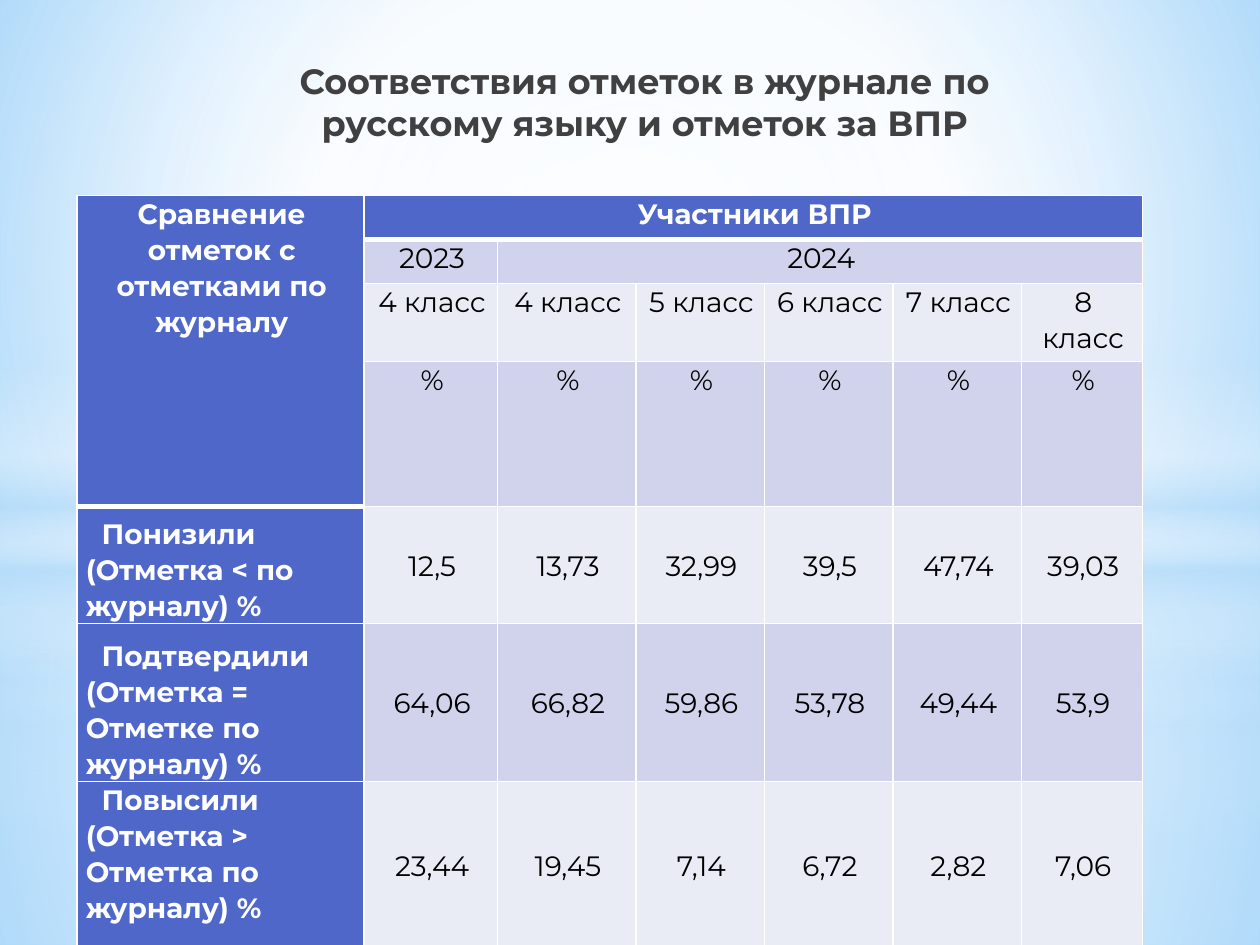
import dataclasses

import pptx
import pptx.dml.color
import pptx.enum.shapes
import pptx.enum.text
import pptx.oxml
import pptx.oxml.ns
import pptx.util

Cm = pptx.util.Cm
Pt = pptx.util.Pt
Anchor = pptx.enum.text.MSO_ANCHOR
Align = pptx.enum.text.PP_ALIGN
ShapeType = pptx.enum.shapes.MSO_SHAPE
qn = pptx.oxml.ns.qn
NAMESPACE = pptx.oxml.ns.nsdecls("a")


@dataclasses.dataclass(frozen=True)
class Theme:
    font: str = "Montserrat"
    title_size: float = 20
    table_size: float = 16
    title: str = "404040"
    header: str = "4E67C8"
    band_dark: str = "D0D3EB"
    band_light: str = "E9EBF5"
    text: str = "000000"
    white: str = "FFFFFF"
    haze: str = "B4DCFA"
    sky: str = "9ED5FF"
    deep_sky: str = "5BB9FF"


THEME = Theme()

COLUMN_WIDTHS = [5.79, 2.69, 2.79, 2.59, 2.59, 2.59, 2.44]
ROW_HEIGHTS = [0.89, 0.89, 1.57, 2.92, 2.36, 3.18, 3.38]
HEADER_ROWS = 4
ROWS = [
    ["Сравнение отметок с отметками по журналу", "Участники ВПР"],
    ["", "2023", "2024"],
    ["", "4 класс", "4 класс", "5 класс", "6 класс", "7 класс", "8 класс"],
    [""] + ["%"] * 6,
    ["Понизили (Отметка < по журналу) %",
     "12,5", "13,73", "32,99", "39,5", "47,74", "39,03"],
    ["Подтвердили (Отметка = Отметке по журналу) %",
     "64,06", "66,82", "59,86", "53,78", "49,44", "53,9"],
    ["Повысили (Отметка > Отметка по журналу) %",
     "23,44", "19,45", "7,14", "6,72", "2,82", "7,06"],
]
MERGES = [((0, 0), (3, 0)), ((0, 1), (0, 6)), ((1, 2), (1, 6))]
THICK_BELOW = {(0, column) for column in range(1, 7)} | {(0, 0), (3, 0)}


def rgb(value):
    return pptx.dml.color.RGBColor.from_string(value)


def gradient(stops, focus=None):
    stop_xml = "".join(
        f'<a:gs pos="{position * 1000}"><a:srgbClr val="{color}">'
        f'<a:alpha val="{alpha * 1000}"/></a:srgbClr></a:gs>'
        for position, color, alpha in stops
    )
    if focus:
        left, top, right, bottom = (value * 1000 for value in focus)
        direction = (
            f'<a:path path="circle"><a:fillToRect l="{left}" t="{top}" '
            f'r="{right}" b="{bottom}"/></a:path>'
        )
    else:
        direction = '<a:lin ang="5400000" scaled="0"/>'
    return pptx.oxml.parse_xml(
        f'<a:gradFill {NAMESPACE} rotWithShape="1">'
        f"<a:gsLst>{stop_xml}</a:gsLst>{direction}</a:gradFill>"
    )


def add_glow(slide, shape_type, top, height, stops, focus=(50, 50, 50, 50)):
    shape = slide.shapes.add_shape(shape_type, 0, Cm(top), Cm(25.4), Cm(height))
    shape.shadow.inherit = False
    shape.line.fill.background()
    shape.fill.background()
    properties = shape._element.spPr
    properties.replace(properties.find(qn("a:noFill")), gradient(stops, focus))


def add_horizon(slide, horizon, height, extra_alpha):
    white, haze = THEME.white, THEME.haze
    rectangle = ShapeType.RECTANGLE
    ground = [(0, white, 91 + extra_alpha), (37, white, 76 + extra_alpha),
              (100, haze, 79 + extra_alpha)]
    heaven = [(0, white, 89 + extra_alpha), (48, white, 62 + extra_alpha),
              (100, haze, 79 + extra_alpha)]
    streak = [(0, white, 0), (29, white, 30), (45, haze, 40),
              (55, white, 26), (65, haze, 60), (100, white, 0)]
    add_glow(slide, rectangle, horizon, height - horizon, ground)
    add_glow(slide, rectangle, 0, horizon, heaven)
    add_glow(slide, rectangle, horizon - 3.4 - 0.3 * (1 - extra_alpha), 6.35, streak, None)
    add_glow(slide, ShapeType.OVAL, 4.45, 14.17,
             [(0, white, 100), (56 - 2 * extra_alpha, white, 0)])


def add_background(slide, height):
    slide.background.fill.solid()
    properties = slide._element.find(".//" + qn("p:bgPr"))
    properties.replace(
        properties.find(qn("a:solidFill")),
        gradient([(0, THEME.sky, 100), (60, THEME.white, 100),
                  (100, THEME.deep_sky, 100)], (20, 10, 20, 60)),
    )
    add_horizon(slide, 14.17, height, 0)
    add_horizon(slide, 10.75, height, 1)


def place_title(slide, left, top, width, height):
    title = slide.shapes.title
    title.left, title.top, title.width, title.height = map(Cm, (left, top, width, height))
    frame = title.text_frame
    frame.text = "Соответствия отметок в журнале по русскому языку и отметок за ВПР"
    frame.word_wrap = True
    frame.auto_size = pptx.enum.text.MSO_AUTO_SIZE.NONE
    frame.vertical_anchor = Anchor.BOTTOM
    frame.margin_bottom = Cm(2.03)
    paragraph = frame.paragraphs[0]
    paragraph.alignment = Align.CENTER
    paragraph.font.name = THEME.font
    paragraph.font.size = Pt(THEME.title_size)
    paragraph.font.bold = True
    paragraph.font.color.rgb = rgb(THEME.title)
    slide.shapes._spTree.append(title._element)


def set_borders(cell, row, column):
    widths = {
        "lnL": 1,
        "lnR": 1,
        "lnT": 3 if (row - 1, column) in THICK_BELOW else 1,
        "lnB": 3 if (row, column) in THICK_BELOW else 1,
    }
    properties = cell._tc.get_or_add_tcPr()
    for tag, width in widths.items():
        properties.append(pptx.oxml.parse_xml(
            f'<a:{tag} {NAMESPACE} w="{Pt(width)}"><a:solidFill>'
            f'<a:srgbClr val="{THEME.white}"/></a:solidFill></a:{tag}>'
        ))


def format_cell(cell, row, column, text):
    is_header = row == 0 or column == 0
    is_label = column == 0 and row >= HEADER_ROWS
    set_borders(cell, row, column)
    band = THEME.band_dark if row % 2 else THEME.band_light
    cell.fill.solid()
    cell.fill.fore_color.rgb = rgb(THEME.header if is_header else band)
    cell.margin_left, cell.margin_right = Cm(0.18), Cm(0.13)
    cell.margin_top = cell.margin_bottom = 0
    if row < HEADER_ROWS or (is_label and row == len(ROWS) - 1):
        cell.vertical_anchor = Anchor.TOP
    else:
        cell.vertical_anchor = Anchor.BOTTOM if is_label else Anchor.MIDDLE
    cell.text = text
    paragraph = cell.text_frame.paragraphs[0]
    paragraph.alignment = Align.LEFT if is_label else Align.CENTER
    paragraph.line_spacing = 1.06
    paragraph.space_after = Pt(8)
    if is_label:
        paragraph._p.get_or_add_pPr().set("indent", str(Cm(0.32)))
    paragraph.font.name = THEME.font
    paragraph.font.size = Pt(THEME.table_size)
    paragraph.font.bold = is_header
    paragraph.font.color.rgb = rgb(THEME.white if is_header else THEME.text)


def add_marks_table(slide, left, top):
    table = slide.shapes.add_table(
        len(ROWS), len(COLUMN_WIDTHS), Cm(left), Cm(top),
        Cm(sum(COLUMN_WIDTHS)), Cm(sum(ROW_HEIGHTS)),
    ).table
    table.first_row = table.horz_banding = False
    for column, width in zip(table.columns, COLUMN_WIDTHS):
        column.width = Cm(width)
    for row, height in zip(table.rows, ROW_HEIGHTS):
        row.height = Cm(height)
    for row, texts in enumerate(ROWS):
        for column in range(len(COLUMN_WIDTHS)):
            text = texts[column] if column < len(texts) else ""
            format_cell(table.cell(row, column), row, column, text)
    for first, last in MERGES:
        table.cell(*first).merge(table.cell(*last))


def main():
    presentation = pptx.Presentation()
    presentation.slide_width, presentation.slide_height = Cm(25.4), Cm(19.05)
    slide = presentation.slides.add_slide(presentation.slide_layouts[5])
    add_background(slide, 19.05)
    place_title(slide, 4.7, 1.12, 16.59, 3.81)
    add_marks_table(slide, 1.55, 3.94)
    presentation.save("out.pptx")


if __name__ == "__main__":
    main()
